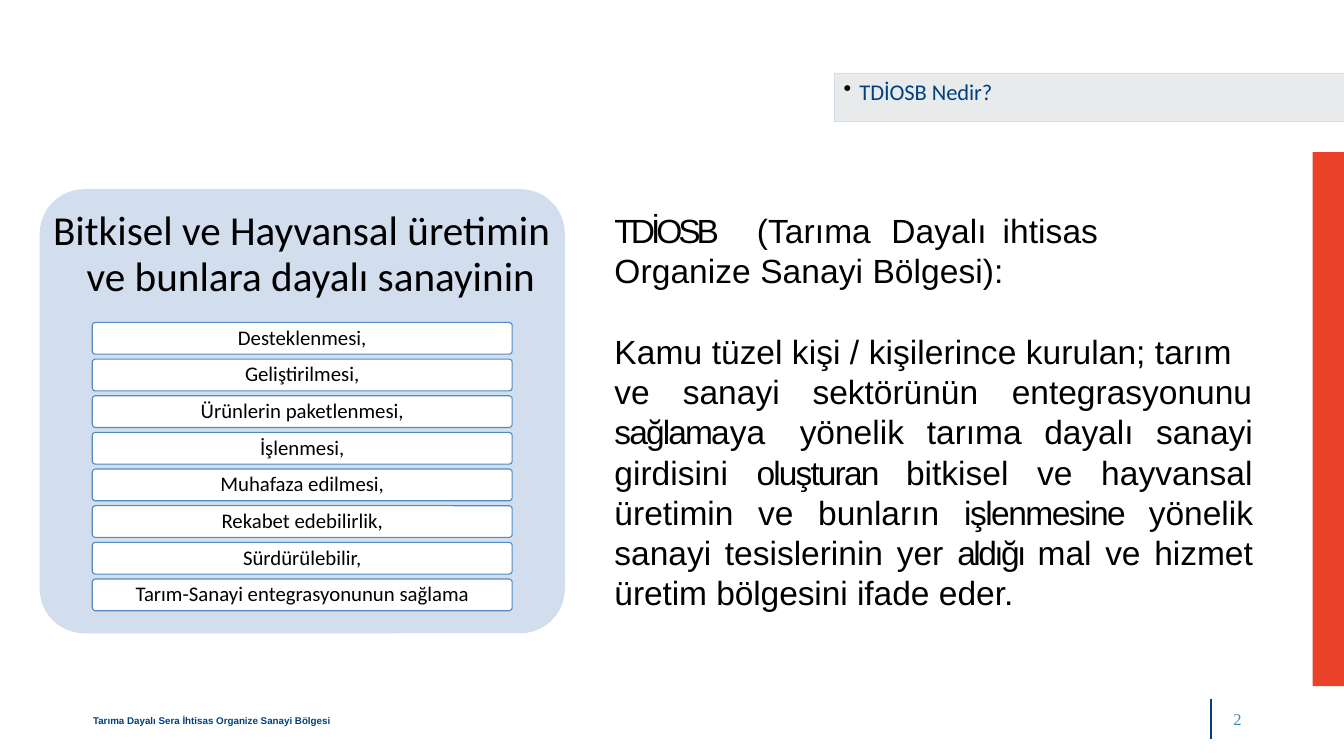
import pptx
import pptx.dml.color
import pptx.enum.shapes
import pptx.enum.text
import pptx.util
from lxml import etree
from pptx.oxml.ns import qn

Pt = pptx.util.Pt
Shapes = pptx.enum.shapes.MSO_SHAPE
Align = pptx.enum.text.PP_ALIGN

COLORS = {
    "navy": "004081", "red": "E94228", "panel": "D2DEEE", "white": "FFFFFF",
    "black": "000000", "outline": "528BC1", "number": "4789B0", "bar": "E8EAEB",
}
PAGE_WIDTH, PAGE_HEIGHT = 1583, 891
GOALS = [
    "Desteklenmesi,", "Geliştirilmesi,", "Ürünlerin paketlenmesi,", "İşlenmesi,",
    "Muhafaza edilmesi,", "Rekabet edebilirlik,", "Sürdürülebilir,",
    "Tarım-Sanayi entegrasyonunun sağlama",
]
LINE_PITCH = 47.5
# Each part: row on the line grid, number of lines, spans (text, spacing), format.
DEFINITION = [
    (0, 2, [("TDİOSB\t", -4.8), ("(", 0), ("Tarıma\tDayalı\tihtisas", 0.1),
            ("\n", 0), ("Organize Sanayi Bölgesi):", 0.1)],
     {"tabs": [167.8, 326.2, 457.2]}),
    (3, 1, [("Kamu ", 0.1), ("tüzel ", 0), ("kişi / kişilerince kurulan; tarım", 0.1)], {}),
    (4, 1, [("ve\tsanayi\tsektörünün\tentegrasyonunu", 0)],
     {"tabs": [80.6, 233.3, 468]}),
    (5, 1, [("sağlama", -2.2), ("y", -1.8), ("a\työnelik\ttarıma\tdayalı\tsanayi", 0)],
     {"tabs": [218.2, 367.9, 506.2, 637.9]}),
    (6, 4, [("girdisini ", 0), ("oluşturan ", -2.2), ("bitkisel", 0),
            (" ve hayvansal ", 0.1), ("üretimin ve bunların ", 0),
            ("işlenmesine ", -1.8), ("yönelik sanayi tesislerinin yer ", 0),
            ("aldığı ", -3), ("mal ve hizmet ", 0), ("üretim bölgesini ", -0.1),
            ("ifade eder.", 0)],
     {"align": Align.JUSTIFY}),
]


def color(name):
    return pptx.dml.color.RGBColor.from_string(COLORS[name])


def draw_shape(page, kind, box, fill, line=None, width=1, corner=None):
    shape = page.shapes.add_shape(kind, *map(Pt, box))
    shape.shadow.inherit = False
    shape.fill.solid()
    shape.fill.fore_color.rgb = color(fill)
    if line:
        shape.line.color.rgb = color(line)
        shape.line.width = Pt(width)
    else:
        shape.line.fill.background()
    if corner is not None:
        shape.adjustments[0] = corner
    return shape


def add_text_box(page, box):
    return page.shapes.add_textbox(*map(Pt, box))


def write(shape, text, size, font="Calibri", ink="black", bold=False, top=0,
          align=Align.LEFT, margin=0, indent=0, leading=None, bullet=None, tabs=()):
    """Write a string, or a list of (text, letter spacing) spans, as one paragraph."""
    frame = shape.text_frame
    frame.word_wrap = True
    frame.vertical_anchor = pptx.enum.text.MSO_ANCHOR.TOP
    frame.margin_left = frame.margin_right = frame.margin_bottom = 0
    frame.margin_top = Pt(top)
    para = frame.paragraphs[0]
    properties = para._p.get_or_add_pPr()
    properties.set("marL", str(Pt(margin)))
    if indent:
        properties.set("indent", str(Pt(indent)))
    if bullet:
        bullet_color = etree.SubElement(properties, qn("a:buClr"))
        etree.SubElement(bullet_color, qn("a:srgbClr"), val=COLORS["black"])
        etree.SubElement(properties, qn("a:buChar"), char=bullet)
    if tabs:
        stops = etree.SubElement(properties, qn("a:tabLst"))
        for stop in tabs:
            etree.SubElement(stops, qn("a:tab"), pos=str(Pt(stop)), algn="l")
    para.alignment = align
    if leading:
        para.line_spacing = Pt(leading)
    for words, spacing in [(text, 0)] if isinstance(text, str) else text:
        if words == "\n":
            para.add_line_break()
            continue
        span = para.add_run()
        span.text = words
        span.font.size = Pt(size)
        span.font.name = font
        span.font.bold = bold
        span.font.color.rgb = color(ink)
        if spacing:
            span._r.get_or_add_rPr().set("spc", str(round(spacing * 100)))
    etree.SubElement(para._p, qn("a:endParaRPr"), sz=str(round(size * 100)))


def add_heading(page, left, top, width, height):
    bar = draw_shape(page, Shapes.RECTANGLE, (left, top, width, height),
                     "bar", "panel", 0.79)
    write(bar, [("TDİOSB Nedir?", -0.1)], 26.5, ink="navy", top=6,
          margin=29.5, indent=-18.7, bullet="•")


def add_goals_panel(page, left, top, width, height):
    draw_shape(page, Shapes.ROUNDED_RECTANGLE, (left, top, width, height),
               "panel", corner=0.1)
    title = add_text_box(page, (left + 14.4, top + 15.8, width - 28.1, 113.8))
    write(title, "Bitkisel ve Hayvansal üretimin ve bunlara dayalı sanayinin",
          48.5, top=7.5, margin=41, indent=-39.6, leading=53.3)
    for row, goal in enumerate(GOALS):
        box = (left + 61.9, top + 157 + row * 43.2, width - 123.9, 37.4)
        card = draw_shape(page, Shapes.ROUNDED_RECTANGLE, box,
                          "white", "outline", 1.29, 0.1)
        write(card, goal, 24.5, top=1.2, align=Align.CENTER)


def add_definition(page, left, top, width):
    for row, lines, spans, style in DEFINITION:
        box = (left, top + row * LINE_PITCH, width, lines * LINE_PITCH + 2.2)
        write(add_text_box(page, box), spans, 39.5, font="Arial", top=1.6,
              margin=0.9, leading=LINE_PITCH, **style)


def add_footer(page, left, top, rule_left):
    rule = page.shapes.add_connector(
        pptx.enum.shapes.MSO_CONNECTOR.STRAIGHT,
        Pt(rule_left), Pt(top), Pt(rule_left), Pt(top + 47.5))
    rule.line.color.rgb = color("navy")
    rule.line.width = Pt(3.27)
    etree.SubElement(rule._element.spPr, qn("a:effectLst"))
    write(add_text_box(page, (left, top + 19.4, 284, 15.1)),
          "Tarıma Dayalı Sera İhtisas Organize Sanayi Bölgesi", 11.5,
          font="Arial", ink="navy", bold=True, margin=0.9, leading=13.8)
    write(add_text_box(page, (rule_left + 23.8, top + 11.5, 15.8, 26.6)),
          "2", 19.5, font="Times New Roman", ink="number", top=0.9, margin=2.7)


def main():
    deck = pptx.Presentation()
    deck.slide_width, deck.slide_height = Pt(PAGE_WIDTH), Pt(PAGE_HEIGHT)
    page = deck.slides.add_slide(deck.slide_layouts[6])
    draw_shape(page, Shapes.RECTANGLE, (1546, 179.3, 37, 629.3), "red")
    add_goals_panel(page, 46.8, 223, 618.5, 523.4)
    add_heading(page, 982.8, 86, 600.2, 57.6)
    add_definition(page, 722.9, 245.5, 753.1)
    add_footer(page, 108.7, 823.5, 1426.3)
    deck.save("out.pptx")


if __name__ == "__main__":
    main()
